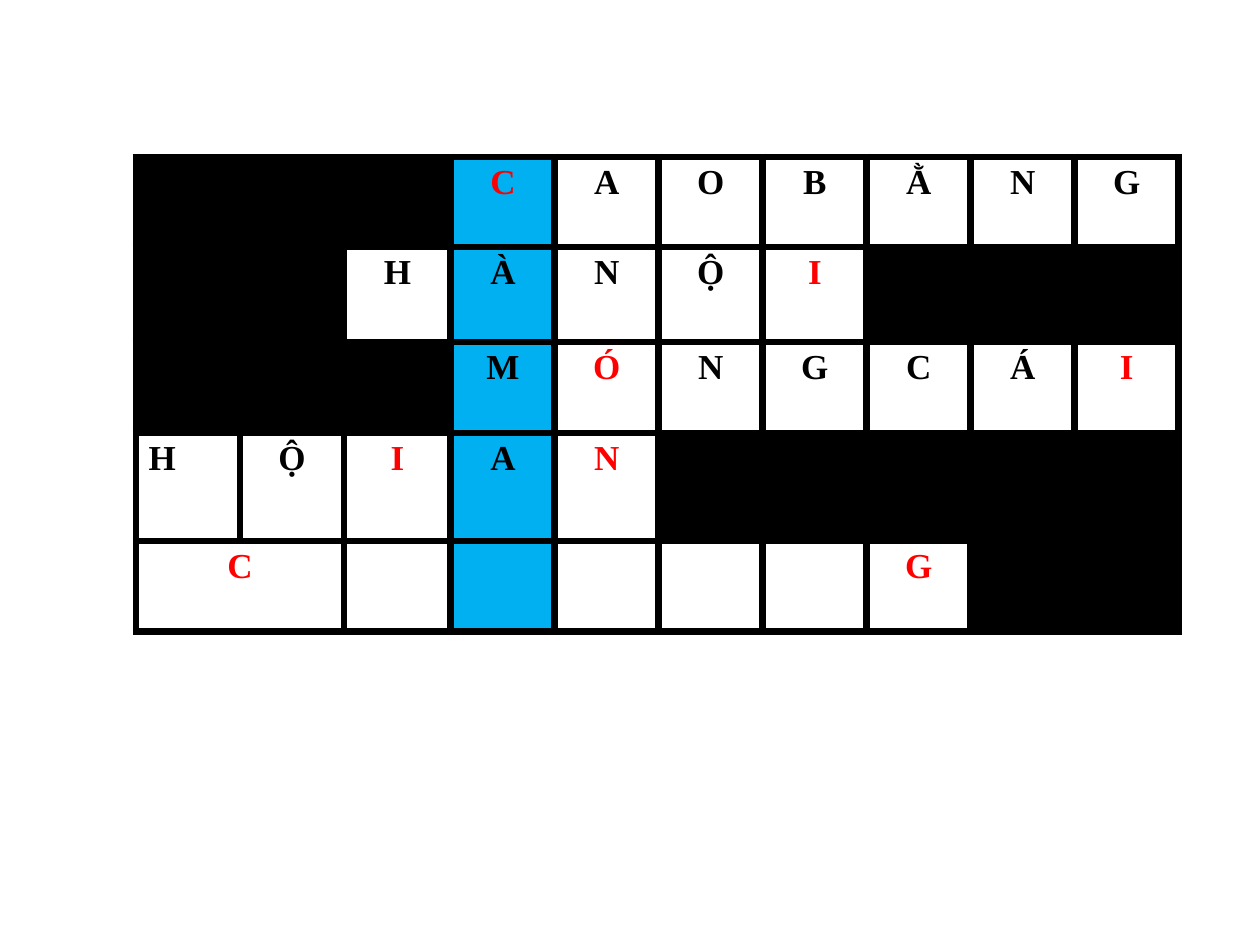
import dataclasses

import lxml.etree
import pptx
import pptx.dml.color
import pptx.enum.text
import pptx.oxml.ns
import pptx.table
import pptx.util

EMU_PER_PIXEL = 914400 / 126
BLACK = pptx.dml.color.RGBColor(0x00, 0x00, 0x00)
RED = pptx.dml.color.RGBColor(0xFF, 0x00, 0x00)
BLUE = pptx.dml.color.RGBColor(0x00, 0xB0, 0xF0)
FONT_NAME = "Times New Roman"
FONT_SIZE = pptx.util.Pt(20)
BORDER_WIDTH = pptx.util.Pt(4.5)
CENTER = pptx.enum.text.PP_ALIGN.CENTER
LEFT = pptx.enum.text.PP_ALIGN.LEFT

COLUMN_WIDTHS = [104, 104, 107] + [104] * 7
COLUMN_COUNT = len(COLUMN_WIDTHS)
KEYWORD_COLUMN = 3


@dataclasses.dataclass(frozen=True)
class Answer:
    height: int
    start: int
    letters: tuple[str, ...]
    red_columns: tuple[int, ...]
    first_span: int = 1
    first_alignment: pptx.enum.text.PP_ALIGN = CENTER
    merge_tail: bool = True

    @property
    def end(self) -> int:
        return self.start + len(self.letters)


ANSWERS = [
    Answer(90, 3, tuple("CAOBẰNG"), (3,)),
    Answer(95, 2, tuple("HÀNỘI"), (6,)),
    Answer(91, 3, tuple("MÓNGCÁI"), (4, 9)),
    Answer(108, 0, tuple("HỘIAN"), (2, 4), first_alignment=LEFT),
    Answer(91, 0, ("C", "", "", "", "", "", "", "G"), (0, 7),
           first_span=2, merge_tail=False),
]


def px(length: int) -> pptx.util.Emu:
    return pptx.util.Emu(round(length * EMU_PER_PIXEL))


def add_borders(cell: pptx.table._Cell) -> None:
    properties = cell._tc.get_or_add_tcPr()
    for side in ("a:lnL", "a:lnR", "a:lnT", "a:lnB"):
        line = lxml.etree.SubElement(properties, pptx.oxml.ns.qn(side), w=str(BORDER_WIDTH))
        fill = lxml.etree.SubElement(line, pptx.oxml.ns.qn("a:solidFill"))
        lxml.etree.SubElement(fill, pptx.oxml.ns.qn("a:srgbClr"), val=str(BLACK))


def fill_cell(cell: pptx.table._Cell, color: pptx.dml.color.RGBColor) -> None:
    cell.fill.solid()
    cell.fill.fore_color.rgb = color


def merge_columns(table: pptx.table.Table, row: int, start: int, end: int) -> None:
    if end - start > 1:
        table.cell(row, start).merge(table.cell(row, end - 1))


def write_letter(
    cell: pptx.table._Cell,
    letter: str,
    color: pptx.dml.color.RGBColor,
    alignment: pptx.enum.text.PP_ALIGN,
) -> None:
    paragraph = cell.text_frame.paragraphs[0]
    paragraph.text = letter
    paragraph.alignment = alignment
    for run in paragraph.runs:
        run.font.name = FONT_NAME
        run.font.size = FONT_SIZE
        run.font.bold = True
        run.font.color.rgb = color


def draw_answer(table: pptx.table.Table, row: int, answer: Answer) -> None:
    table.rows[row].height = px(answer.height)
    for column in range(COLUMN_COUNT):
        cell = table.cell(row, column)
        add_borders(cell)
        if not answer.start <= column < answer.end:
            fill_cell(cell, BLACK)
            continue
        if column == KEYWORD_COLUMN:
            fill_cell(cell, BLUE)
        else:
            cell.fill.background()
        letter = answer.letters[column - answer.start]
        if letter:
            color = RED if column in answer.red_columns else BLACK
            alignment = answer.first_alignment if column == answer.start else CENTER
            write_letter(cell, letter, color, alignment)
    merge_columns(table, row, 0, answer.start)
    merge_columns(table, row, answer.start, answer.start + answer.first_span)
    if answer.merge_tail:
        merge_columns(table, row, answer.end, COLUMN_COUNT)


def main() -> None:
    presentation = pptx.Presentation()
    presentation.slide_width = px(1260)
    presentation.slide_height = px(945)
    slide = presentation.slides.add_slide(presentation.slide_layouts[6])

    total_height = sum(answer.height for answer in ANSWERS)
    shape = slide.shapes.add_table(
        len(ANSWERS), COLUMN_COUNT,
        px(136), px(157), px(sum(COLUMN_WIDTHS)), px(total_height),
    )
    crossword = shape.table
    crossword.first_row = False
    crossword.horz_banding = False
    for column, width in zip(crossword.columns, COLUMN_WIDTHS):
        column.width = px(width)
    for row, answer in enumerate(ANSWERS):
        draw_answer(crossword, row, answer)

    presentation.save("out.pptx")


if __name__ == "__main__":
    main()
